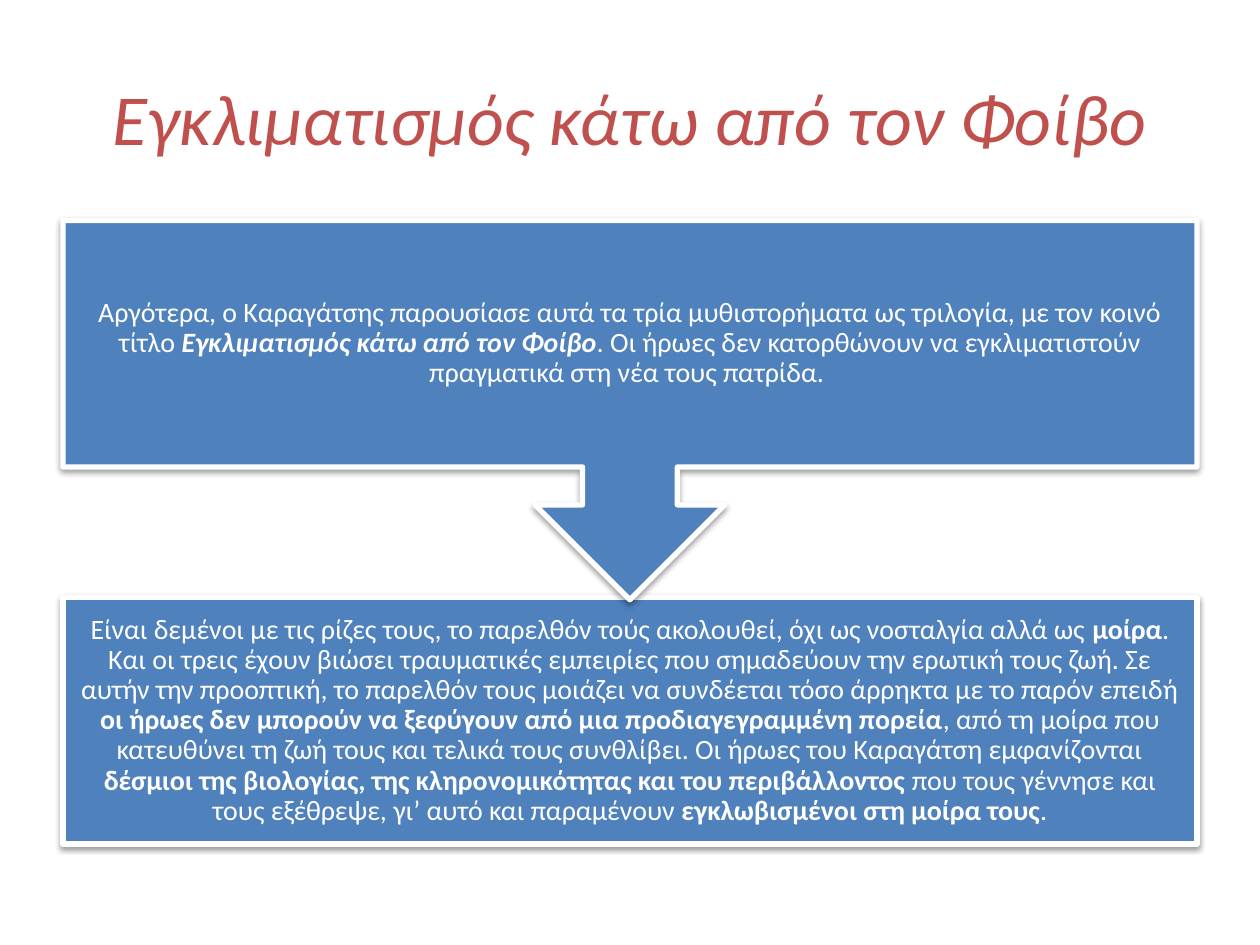
from lxml.etree import SubElement
from pptx import Presentation
from pptx.dml.color import RGBColor
from pptx.enum.shapes import MSO_SHAPE as Preset
from pptx.enum.text import MSO_ANCHOR as Anchor, PP_ALIGN as Align
from pptx.oxml.ns import qn
from pptx.util import Inches, Pt

FONT = "Calibri"
RED, BLUE, WHITE, BLACK = "C0504D", "4F81BD", "FFFFFF", "000000"
LEFT, WIDTH = 0.5, 9
TITLE = "Εγκλιματισμός κάτω από τον Φοίβο"
TRILOGY = [
    ("Αργότερα, ο Καραγάτσης παρουσίασε αυτά τα τρία μυθιστορήματα ως τριλογία, "
     "με τον κοινό τίτλο ", ""),
    (TITLE, "bi"),
    (". Οι ήρωες δεν κατορθώνουν να εγκλιματιστούν πραγματικά στη νέα τους πατρίδα. ", ""),
]
FATE = [
    ("Είναι δεμένοι με τις ρίζες τους, το παρελθόν τούς ακολουθεί, "
     "όχι ως νοσταλγία αλλά ως ", ""),
    ("μοίρα", "b"),
    (". Και οι τρεις έχουν βιώσει τραυματικές εμπειρίες που σημαδεύουν την ερωτική τους ζωή. "
     "Σε αυτήν την προοπτική, το παρελθόν τους μοιάζει να συνδέεται τόσο άρρηκτα "
     "με το παρόν επειδή ", ""),
    ("οι ήρωες δεν μπορούν να ξεφύγουν από μια προδιαγεγραμμένη πορεία", "b"),
    (", από τη μοίρα που κατευθύνει τη ζωή τους και τελικά τους συνθλίβει. "
     "Οι ήρωες του Καραγάτση εμφανίζονται ", ""),
    ("δέσμιοι της βιολογίας, της κληρονομικότητας και του περιβάλλοντος", "b"),
    (" που τους γέννησε και τους εξέθρεψε, γι’ αυτό και παραμένουν ", ""),
    ("εγκλωβισμένοι στη μοίρα τους", "b"),
    (".", ""),
]


def color(hex_value):
    """Turn a hex string into a colour."""
    return RGBColor.from_string(hex_value)


def style_run(run, size, hex_value, bold=False, italic=False):
    """Set the font of a run."""
    font = run.font
    font.name, font.size, font.bold, font.italic = FONT, Pt(size), bold, italic
    font.color.rgb = color(hex_value)


def add_shadow(shape):
    """Give a shape a soft shadow falling straight down."""
    shape.shadow.inherit = False
    effects = shape.element.spPr.find(qn("a:effectLst"))
    shadow = SubElement(effects, qn("a:outerShdw"), blurRad=str(Pt(3.1)),
                        dist=str(Pt(1.6)), dir="5400000", rotWithShape="0")
    tint = SubElement(shadow, qn("a:srgbClr"), val=BLACK)
    SubElement(tint, qn("a:alpha"), val="38000")


def place_title(page, left, top, width, height):
    """Move and format the title placeholder."""
    title = page.shapes.title
    title.left, title.top = Inches(left), Inches(top)
    title.width, title.height = Inches(width), Inches(height)
    title.text_frame.text = TITLE
    title.text_frame.vertical_anchor = Anchor.MIDDLE
    para = title.text_frame.paragraphs[0]
    para.alignment = Align.CENTER
    style_run(para.runs[0], 41, RED, italic=True)


def add_step(page, preset, spans, left, top, width, height):
    """Add one step of the process with its mixed-style text."""
    box = page.shapes.add_shape(preset, Inches(left), Inches(top),
                                Inches(width), Inches(height))
    box.fill.solid()
    box.fill.fore_color.rgb = color(BLUE)
    box.line.color.rgb = color(WHITE)
    box.line.width = Pt(3)
    add_shadow(box)
    frame = box.text_frame
    frame.word_wrap = True
    frame.vertical_anchor = Anchor.MIDDLE
    frame.margin_left = frame.margin_right = Inches(0.12)
    frame.margin_top = frame.margin_bottom = Inches(0.12)
    para = frame.paragraphs[0]
    para.alignment = Align.CENTER
    para.line_spacing = 0.9
    for text, style in spans:
        span = para.add_run()
        span.text = text
        style_run(span, 16, WHITE, "b" in style, "i" in style)


def main():
    """Build the deck."""
    deck = Presentation()
    deck.slide_width, deck.slide_height = Inches(10), Inches(7.5)
    page = deck.slides.add_slide(deck.slide_layouts[5])
    place_title(page, LEFT, 0.3, WIDTH, 1.25)
    add_step(page, Preset.RECTANGLE, FATE, LEFT, 4.74, WIDTH, 1.96)
    add_step(page, Preset.DOWN_ARROW_CALLOUT, TRILOGY, LEFT, 1.75, WIDTH, 3.01)
    deck.save("out.pptx")


if __name__ == "__main__":
    main()
